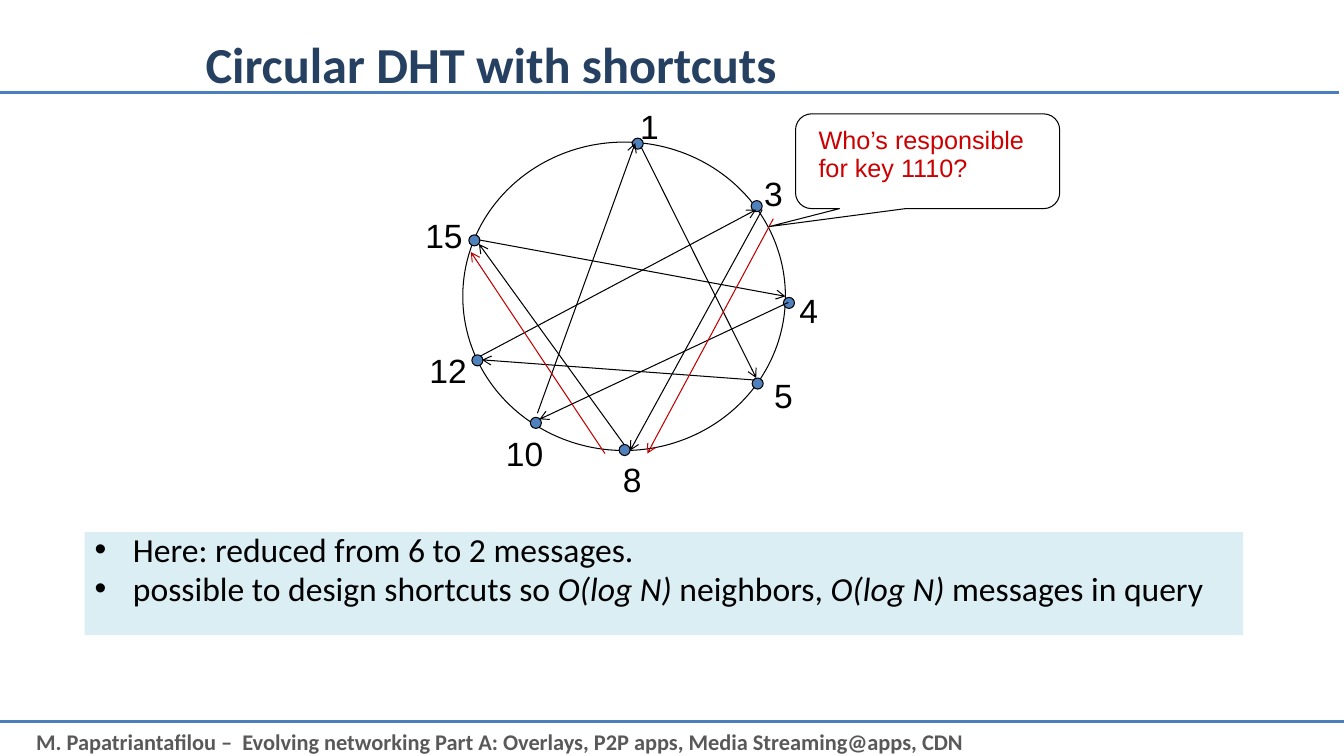
from lxml.etree import SubElement
from pptx import Presentation
from pptx.dml.color import RGBColor
from pptx.enum.shapes import MSO_CONNECTOR, MSO_SHAPE
from pptx.enum.text import MSO_ANCHOR, PP_ALIGN
from pptx.oxml.ns import qn
from pptx.util import Pt

PX = 9144  # EMU per px, 100 px to the inch
NAVY = RGBColor(0x25, 0x40, 0x61)
RULE_BLUE = RGBColor(0x4B, 0x7E, 0xBC)
NODE_BLUE = RGBColor(0x4F, 0x81, 0xBD)
PALE_BLUE = RGBColor(0xDB, 0xEE, 0xF4)
GREY = RGBColor(0x59, 0x59, 0x59)
BLACK = RGBColor(0, 0, 0)
QUERY_RED = RGBColor(0xC0, 0, 0)
QUESTION_RED = RGBColor(0xCC, 0, 0)

NODE_SIZE = 11
# peer: (left, top of its dot), (left, top, width of its label)
PEERS = {
    "1": ((627, 137), (625, 100, 39)),
    "3": ((745, 199), (748, 167, 39)),
    "4": ((777, 295), (783, 283, 39)),
    "5": ((746, 375), (758, 367, 39)),
    "8": ((614, 441), (608, 450, 39)),
    "10": ((526, 414), (492, 425, 58)),
    "12": ((468, 352), (416, 342, 58)),
    "15": ((465, 233), (412, 208, 58)),
}
SHORTCUTS = [
    ((782, 300), (535, 416)),
    ((748, 377), (478, 357)),
    ((619, 441), (475, 242)),
    ((533, 410), (630, 142)),
    ((477, 353), (750, 208)),
    ((475, 238), (779, 294)),
    ((636, 146), (750, 375)),
    ((756, 208), (625, 447)),
]
QUERY_HOPS = [((767, 217), (642, 450)), ((600, 450), (467, 250))]


def px(*lengths):
    return [length * PX for length in lengths]


def add_line(slide, start, end, color, width=0.75, arrow=False):
    line = slide.shapes.add_connector(MSO_CONNECTOR.STRAIGHT, *px(*start, *end))
    line.line.color.rgb = color
    line.line.width = Pt(width)
    if arrow:
        SubElement(line.line._get_or_add_ln(), qn("a:tailEnd"), type="arrow")
    SubElement(line._element.spPr, qn("a:effectLst"))


def add_outlined(slide, kind, box, fill=None):
    shape = slide.shapes.add_shape(kind, *px(*box))
    shape.shadow.inherit = False
    if fill is None:
        shape.fill.background()
    else:
        shape.fill.solid()
        shape.fill.fore_color.rgb = fill
    shape.line.color.rgb = BLACK
    shape.line.width = Pt(0.75)
    return shape


def add_text(slide, box, paragraphs, font, size, color, bold=False, wrap=True):
    """Add a text box; each paragraph is a list of (text, italic) runs."""
    text_box = slide.shapes.add_textbox(*px(*box))
    frame = text_box.text_frame
    frame.word_wrap = wrap
    for index, runs in enumerate(paragraphs):
        paragraph = frame.add_paragraph() if index else frame.paragraphs[0]
        paragraph.alignment = PP_ALIGN.LEFT
        for text, italic in runs:
            run = paragraph.add_run()
            run.text = text
            run.font.name = font
            run.font.size = Pt(size)
            run.font.color.rgb = color
            run.font.bold = bold
            run.font.italic = italic
    return text_box


def add_bullet(paragraph, indent):
    properties = paragraph._p.get_or_add_pPr()
    properties.set("marL", str(indent * PX))
    properties.set("indent", str(-indent * PX))
    SubElement(properties, qn("a:buFont"), typeface="Arial")
    SubElement(properties, qn("a:buChar"), char="•")


def add_frame(slide):
    add_line(slide, (0, 716), (1333, 716), RULE_BLUE, 2.25)
    footer = "M. Papatriantafilou –  Evolving networking Part A: Overlays, P2P apps, Media Streaming@apps, CDN"
    add_text(slide, (26, 717, 1307, 37), [[(footer, False)]], "Calibri", 16, GREY, bold=True)
    add_line(slide, (-5, 92), (1328, 92), RULE_BLUE, 2.25)
    title = add_text(slide, (194, 0, 900, 125), [[("Circular DHT with shortcuts", False)]],
                     "Calibri", 36, NAVY, bold=True)
    title.text_frame.vertical_anchor = MSO_ANCHOR.MIDDLE


def add_findings(slide):
    findings = [
        [("Here: reduced from 6 to 2 messages.", False)],
        [("possible to design shortcuts so ", False), ("O(log N) ", True),
         ("neighbors, ", False), ("O(log N) ", True), ("messages in query", False)],
    ]
    panel = add_text(slide, (84, 528, 1149, 102), findings, "Calibri", 24, BLACK)
    panel.fill.solid()
    panel.fill.fore_color.rgb = PALE_BLUE
    for paragraph in panel.text_frame.paragraphs:
        paragraph.line_spacing = 0.8
        paragraph.space_before = Pt(4.5)
        add_bullet(paragraph, 38)


def add_ring(slide):
    add_outlined(slide, MSO_SHAPE.OVAL, (459, 141, 320, 306))
    for name, (dot, (left, top, width)) in PEERS.items():
        add_outlined(slide, MSO_SHAPE.OVAL, (*dot, NODE_SIZE, NODE_SIZE), NODE_BLUE)
        add_text(slide, (left, top, width, 50), [[(name, False)]], "Arial", 24, BLACK, wrap=False)
    for links, color in ((SHORTCUTS, BLACK), (QUERY_HOPS, QUERY_RED)):
        for start, end in links:
            add_line(slide, start, end, color, arrow=True)


def add_question(slide):
    callout = add_outlined(slide, MSO_SHAPE.ROUNDED_RECTANGULAR_CALLOUT, (789, 113, 262, 94))
    for index, value in enumerate((-0.6, 0.69, 0.17)):
        callout.adjustments[index] = value
    lines = [[("Who’s responsible", False)], [("for key 1110?", False)]]
    question = add_text(slide, (802, 121, 260, 66), lines, "Arial", 18, QUESTION_RED)
    for paragraph in question.text_frame.paragraphs:
        paragraph.line_spacing = Pt(20)


def main():
    presentation = Presentation()
    presentation.slide_width, presentation.slide_height = px(1333, 750)
    slide = presentation.slides.add_slide(presentation.slide_layouts[6])
    add_frame(slide)
    add_findings(slide)
    add_ring(slide)
    add_question(slide)
    presentation.save("out.pptx")


if __name__ == "__main__":
    main()
